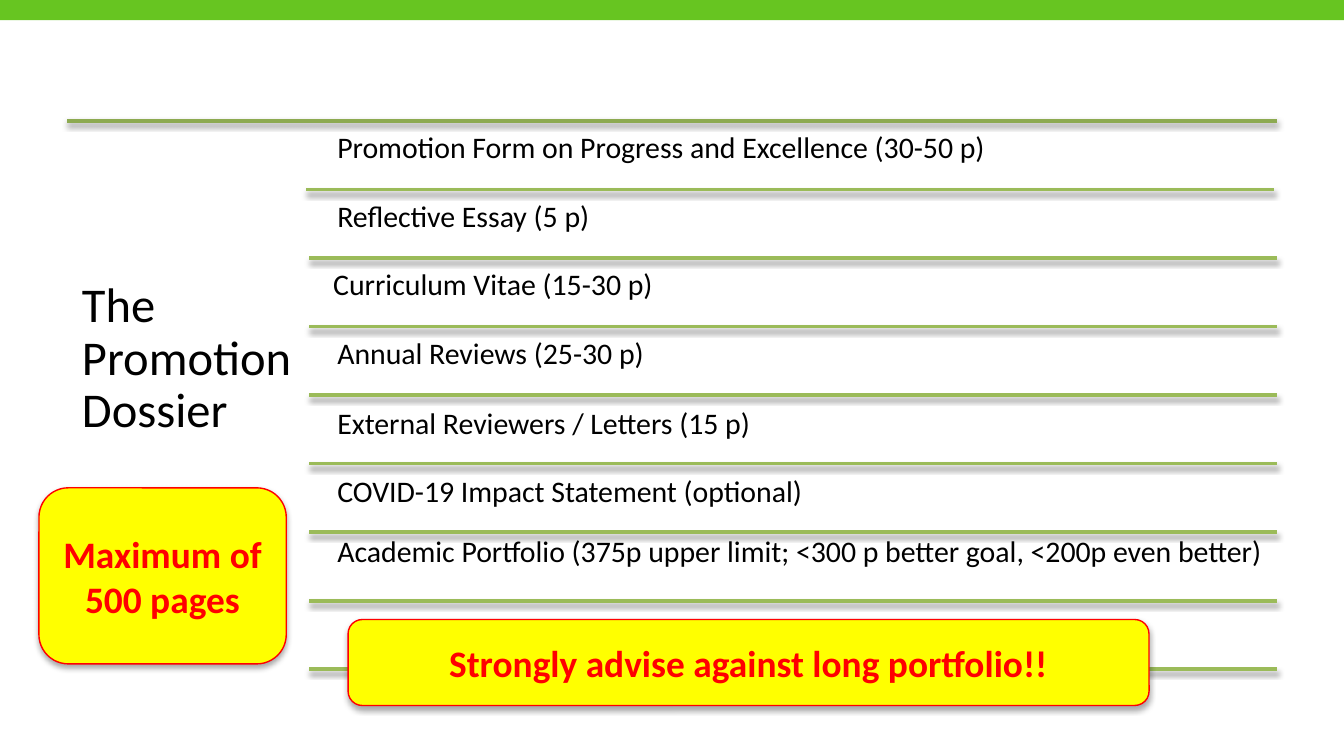
from lxml.etree import SubElement
from pptx import Presentation
from pptx.dml.color import RGBColor
from pptx.enum.shapes import MSO_CONNECTOR, MSO_SHAPE
from pptx.enum.text import MSO_ANCHOR, MSO_AUTO_SIZE, PP_ALIGN
from pptx.oxml.ns import qn
from pptx.util import Inches, Pt

BAR_GREEN = RGBColor(0x67, 0xC5, 0x21)
TOP_RULE = RGBColor(0x8D, 0xAA, 0x51)
ROW_RULE = RGBColor(0x9B, 0xBB, 0x59)
YELLOW = RGBColor(0xFF, 0xFF, 0x00)
RED = RGBColor(0xFF, 0x00, 0x00)
BLACK = RGBColor(0x00, 0x00, 0x00)

SLIDE_WIDTH = Inches(10)
SLIDE_HEIGHT = SLIDE_WIDTH * 9 // 16
ROW_PITCH = 0.51
ROWS = [
    {"text": "Promotion Form on Progress and Excellence (30-50 p)"},
    {"text": "Reflective Essay (5 p)"},
    {"text": "Curriculum Vitae (15-30 p)", "dx": -0.03},
    {"text": "Annual Reviews (25-30 p)"},
    {"text": "External Reviewers / Letters (15 p)", "dy": 0.01},
    {"text": "COVID-19 Impact Statement (optional)", "dy": 0.01},
    {"text": "Academic Portfolio (375p upper limit; <300 p better goal, "
             "<200p even better)", "dy": -0.06},
]


def set_values(target, values):
    """Set each attribute of target from a dict."""
    for name, value in values.items():
        setattr(target, name, value)


def add_shadow(sp, alpha, dist):
    """Give a shape or connector a soft black shadow below it."""
    effects = SubElement(sp._element.spPr, qn("a:effectLst"))
    shadow = SubElement(effects, qn("a:outerShdw"), blurRad=str(Pt(3.1)),
                        dist=str(Pt(dist)), dir="5400000", rotWithShape="0")
    color = SubElement(shadow, qn("a:srgbClr"), val="000000")
    SubElement(color, qn("a:alpha"), val=str(alpha * 1000))


def write_text(sp, text, size, color, inset=None, bold=False,
               align=PP_ALIGN.LEFT, anchor=MSO_ANCHOR.TOP, spacing=0.9):
    """Fill a shape with one formatted paragraph."""
    tf = sp.text_frame
    set_values(tf, {"word_wrap": True, "auto_size": MSO_AUTO_SIZE.NONE,
                    "vertical_anchor": anchor})
    if inset is not None:
        for side in ("left", "top", "right", "bottom"):
            setattr(tf, f"margin_{side}", Inches(inset))
    p = tf.paragraphs[0]
    set_values(p, {"alignment": align, "line_spacing": spacing})
    r = p.add_run()
    r.text = text
    set_values(r.font, {"name": "Calibri", "size": Pt(size), "bold": bold})
    r.font.color.rgb = color


def add_rule(s, left, right, y, color):
    """Draw a horizontal rule with a shadow."""
    line = s.shapes.add_connector(MSO_CONNECTOR.STRAIGHT, Inches(left),
                                  Inches(y), Inches(right), Inches(y))
    line.line.color.rgb = color
    line.line.width = Pt(2)
    add_shadow(line, 38, 1.6)


def add_top_bar(s, left, top, width, height):
    """Draw the green band across the top."""
    bar = s.shapes.add_shape(MSO_SHAPE.RECTANGLE, Inches(left), Inches(top),
                             Inches(width), Inches(height))
    bar.shadow.inherit = False
    bar.fill.solid()
    bar.fill.fore_color.rgb = BAR_GREEN
    bar.line.fill.background()


def add_title(s, left, top, width, height):
    """Place the title beside the rows."""
    title = s.shapes.title
    set_values(title, {"left": Inches(left), "top": Inches(top),
                       "width": Inches(width), "height": Inches(height)})
    write_text(title, "The Promotion Dossier", 26, BLACK, inset=0.11)
    title.text_frame.margin_top = Inches(1.19)


def add_rows(s, left, top, width):
    """Place the dossier parts with a rule under each and one closing rule."""
    for i, row in enumerate(ROWS):
        x = left + 0.14 + row.get("dx", 0)
        y = top + 0.02 + i * ROW_PITCH + row.get("dy", 0)
        box = s.shapes.add_textbox(Inches(x), Inches(y), Inches(7.07),
                                   Inches(0.48))
        write_text(box, row["text"], 16, BLACK, inset=0.07)
    for i in range(len(ROWS) + 1):
        dx = -0.02 if i == 0 else 0
        add_rule(s, left + dx, left + width + dx, top + (i + 1) * ROW_PITCH,
                 ROW_RULE)


def add_callout(s, text, left, top, width, height):
    """Draw a yellow rounded box with a red message."""
    sp = s.shapes.add_shape(MSO_SHAPE.ROUNDED_RECTANGLE, Inches(left),
                            Inches(top), Inches(width), Inches(height))
    sp.fill.solid()
    sp.fill.fore_color.rgb = YELLOW
    sp.line.color.rgb = RED
    sp.line.width = Pt(0.75)
    add_shadow(sp, 35, 1.8)
    write_text(sp, text, 20, RED, bold=True, align=PP_ALIGN.CENTER,
               anchor=MSO_ANCHOR.MIDDLE, spacing=1.0)


def main():
    """Build and save the slide."""
    prs = Presentation()
    set_values(prs, {"slide_width": SLIDE_WIDTH, "slide_height": SLIDE_HEIGHT})
    s = prs.slides.add_slide(prs.slide_layouts[5])
    add_top_bar(s, 0, 0, 10, 0.15)
    add_rule(s, 0.5, 9.5, 0.9, TOP_RULE)
    add_title(s, 0.5, 0.9, 1.8, 4.09)
    add_rows(s, 2.3, 0.9, 7.2)
    add_callout(s, "Maximum of 500 pages", 0.29, 3.63, 1.84, 1.31)
    add_callout(s, "Strongly advise against long portfolio!!",
                2.59, 4.61, 5.96, 0.64)
    prs.save("out.pptx")


if __name__ == "__main__":
    main()
